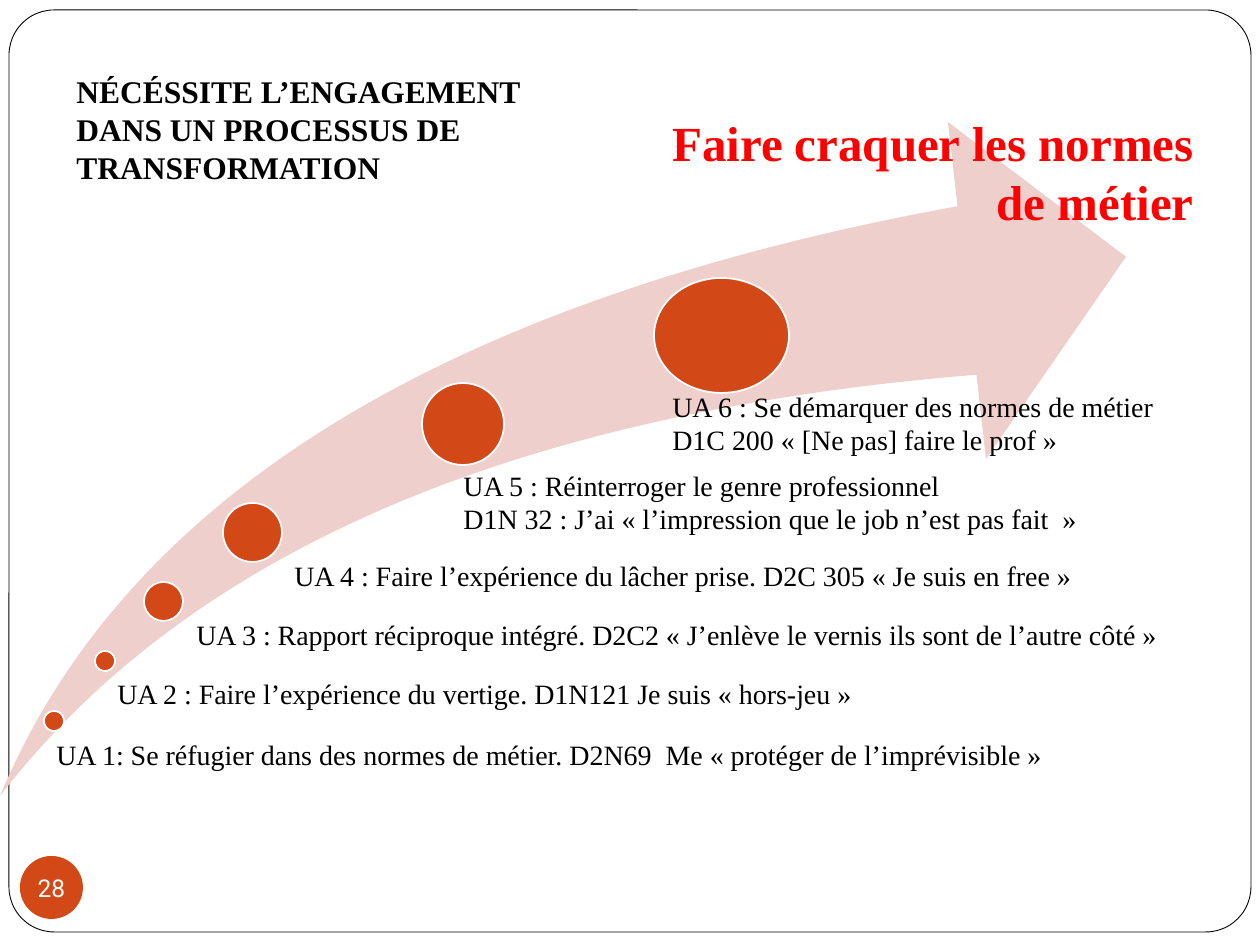
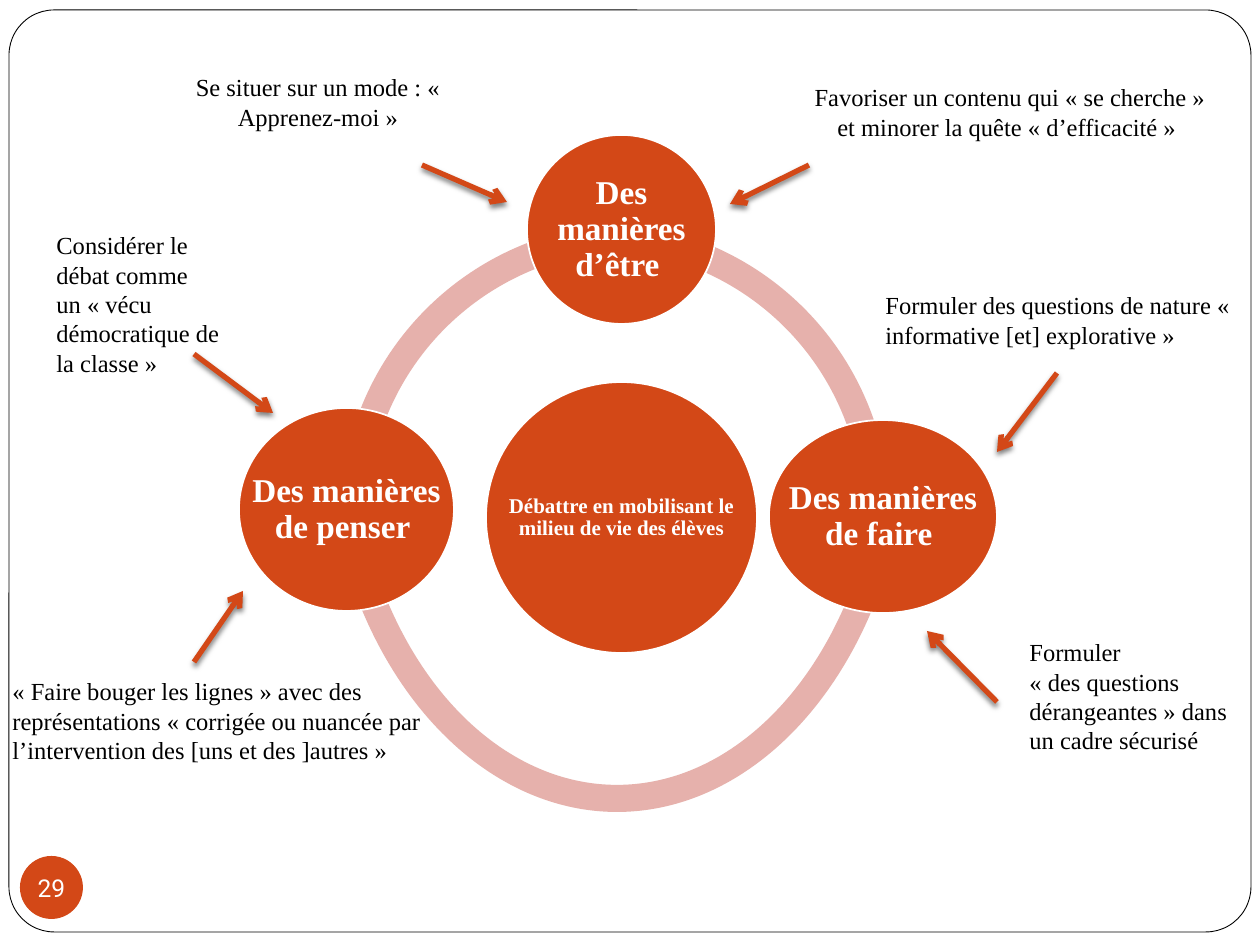
import pptx
import pptx.dml.color
import pptx.enum.shapes
import pptx.enum.text
import pptx.oxml
import pptx.oxml.ns
import pptx.util

RGBColor = pptx.dml.color.RGBColor
SHAPE = pptx.enum.shapes.MSO_SHAPE
ALIGN = pptx.enum.text.PP_ALIGN
ANCHOR = pptx.enum.text.MSO_ANCHOR

ORANGE = RGBColor(0xD3, 0x48, 0x17)
PALE_PINK = RGBColor(0xEF, 0xCF, 0xCC)
PINK = RGBColor(0xE6, 0xB1, 0xAC)
RED = RGBColor(0xFF, 0x00, 0x00)
WHITE = RGBColor(0xFF, 0xFF, 0xFF)
BLACK = RGBColor(0x00, 0x00, 0x00)

SERIF = "Times New Roman"
SANS = "Roboto"
PX_PER_INCH = 126

STEP_DOTS = [
    (654, 278, 135, 115),
    (422, 383, 82, 82),
    (223, 503, 59, 59),
    (144, 582, 39, 39),
    (95, 651, 20, 20),
    (44, 711, 20, 20),
]
STEP_TEXTS = [
    ((660, 383, 640, 118), "UA 6 : Se démarquer des normes de métier\nD1C 200 « [Ne pas] faire le prof »"),
    ((451, 462, 764, 118), "UA 5 : Réinterroger le genre professionnel\nD1N 32 : J’ai « l’impression que le job n’est pas fait  »"),
    ((282, 552, 922, 84), "UA 4 : Faire l’expérience du lâcher prise. D2C 305 « Je suis en free »"),
    ((184, 611, 1111, 84), "UA 3 : Rapport réciproque intégré. D2C2 « J’enlève le vernis ils sont de l’autre côté »"),
    ((105, 670, 973, 47), "UA 2 : Faire l’expérience du vertige. D1N121 Je suis « hors-jeu »"),
    ((44, 731, 1260, 84), "UA 1: Se réfugier dans des normes de métier. D2N69  Me « protéger de l’imprévisible »"),
]
RING_ARCS = [
    ((340, 223, 588, 588), 181.33, 267.43),
    ((323, 8, 588, 804), 21.69, 159.4),
    ((302, 222, 588, 588), 275.14, 359.87),
]
RING_CIRCLES = [
    ((486, 382, 271, 271), "Débattre en mobilisant le milieu de vie des élèves", 12, 3),
    ((527, 135, 189, 189), "Des manières d’être ", 19, 4),
    ((769, 420, 228, 193), "Des manières de faire ", 19, 4),
    ((239, 408, 215, 203), "Des manières de penser ", 19, 4),
]
NOTES = [
    ((154, 66, 328, 72), "Se situer sur un mode : « Apprenez-moi »", ALIGN.CENTER),
    ((799, 76, 422, 72), "Favoriser un contenu qui « se cherche » et minorer la quête « d’efficacité » ", ALIGN.CENTER),
    ((44, 224, 208, 161), "Considérer le débat comme\nun « vécu démocratique de la classe »", ALIGN.LEFT),
    ((0, 670, 496, 102), "« Faire bouger les lignes » avec des représentations « corrigée ou nuancée par l’intervention des [uns et des ]autres »", ALIGN.LEFT),
    ((873, 284, 387, 72), "Formuler des questions de nature « informative [et] explorative »", ALIGN.LEFT),
    ((1017, 631, 243, 131), "Formuler\n« des questions dérangeantes » dans un cadre sécurisé", ALIGN.LEFT),
]
NOTE_ARROWS = [
    (422, 165, 507, 202),
    (809, 165, 730, 204),
    (194, 354, 273, 413),
    (194, 662, 243, 591),
    (1057, 373, 997, 452),
    (997, 702, 927, 631),
]


def px(length):
    return pptx.util.Emu(round(length * 914400 / PX_PER_INCH))


def write(shape, text, size, color=BLACK, bold=False, align=ALIGN.LEFT, font=SERIF):
    shape.text_frame.text = text
    for paragraph in shape.text_frame.paragraphs:
        paragraph.alignment = align
        for run in paragraph.runs:
            run.font.name = font
            run.font.size = pptx.util.Pt(size)
            run.font.bold = bold
            run.font.color.rgb = color


def set_insets(frame, inset):
    frame.margin_left = frame.margin_right = px(inset)
    frame.margin_top = frame.margin_bottom = px(inset)


def add_text(slide, box, text, size, **style):
    shape = slide.shapes.add_textbox(*map(px, box))
    shape.text_frame.word_wrap = True
    write(shape, text, size, **style)
    return shape


def add_figure(slide, kind, box, fill, line=None, line_width=1, adjustments=()):
    shape = slide.shapes.add_shape(kind, *map(px, box))
    shape.shadow.inherit = False
    shape.fill.solid()
    shape.fill.fore_color.rgb = fill
    if line is None:
        shape.line.fill.background()
    else:
        shape.line.color.rgb = line
        shape.line.width = pptx.util.Pt(line_width)
    for index, value in enumerate(adjustments):
        shape.adjustments[index] = value
    return shape


def add_circle(slide, box):
    return add_figure(slide, SHAPE.OVAL, box, ORANGE, WHITE)


def add_labelled_circle(slide, box, text, size, inset):
    add_circle(slide, box)
    label = add_text(slide, box, text, size, color=WHITE, bold=True, align=ALIGN.CENTER)
    label.text_frame.vertical_anchor = ANCHOR.MIDDLE
    label.text_frame.paragraphs[0].line_spacing = 0.9
    set_insets(label.text_frame, inset)


def add_ring_arc(slide, box, start_degrees, end_degrees):
    angles = [degrees * 0.6 for degrees in (start_degrees, end_degrees)]
    add_figure(slide, SHAPE.BLOCK_ARC, box, PINK, adjustments=angles + [4.6 / 100])


def add_arrow(slide, ends):
    straight = pptx.enum.shapes.MSO_CONNECTOR.STRAIGHT
    connector = slide.shapes.add_connector(straight, *map(px, ends))
    connector.line.color.rgb = ORANGE
    connector.line.width = pptx.util.Pt(3)
    namespace = pptx.oxml.ns.nsdecls("a")
    head = pptx.oxml.parse_xml(f'<a:tailEnd {namespace} type="arrow"/>')
    connector.line._get_or_add_ln().append(head)
    shadow = pptx.oxml.parse_xml(
        f'<a:effectLst {namespace}>'
        '<a:outerShdw blurRad="38100" dist="25400" dir="5400000" rotWithShape="0">'
        '<a:srgbClr val="000000"><a:alpha val="50000"/></a:srgbClr>'
        '</a:outerShdw></a:effectLst>'
    )
    connector._element.spPr.append(shadow)


def add_framed_slide(presentation, number):
    slide = presentation.slides.add_slide(presentation.slide_layouts[6])
    add_figure(slide, SHAPE.ROUNDED_RECTANGLE, (9, 10, 1242, 922), WHITE, BLACK, 0.5, [4.9 / 100])
    badge = add_figure(slide, SHAPE.OVAL, (20, 856, 63, 63), ORANGE)
    write(badge, str(number), 14, color=WHITE, align=ALIGN.CENTER, font=SANS)
    badge.text_frame.word_wrap = False
    badge.text_frame.vertical_anchor = ANCHOR.MIDDLE
    set_insets(badge.text_frame, 0)
    return slide


def build_transformation_slide(presentation):
    slide = add_framed_slide(presentation, 28)
    add_figure(slide, SHAPE.SWOOSH_ARROW, (0, 122, 1126, 674), PALE_PINK, adjustments=[0.25, 0.25])
    for box in STEP_DOTS:
        add_circle(slide, box)
    add_text(slide, (630, 106, 576, 131), "Faire craquer les normes de métier", 28,
             color=RED, bold=True, align=ALIGN.RIGHT)
    for box, text in STEP_TEXTS:
        add_text(slide, box, text, 16)
    add_text(slide, (64, 66, 525, 127),
             "NÉCÉSSITE L’ENGAGEMENT DANS UN PROCESSUS DE TRANSFORMATION", 18, bold=True)


def build_debate_slide(presentation):
    slide = add_framed_slide(presentation, 29)
    for arc in RING_ARCS:
        add_ring_arc(slide, *arc)
    for circle in RING_CIRCLES:
        add_labelled_circle(slide, *circle)
    for box, text, align in NOTES:
        add_text(slide, box, text, 14, align=align)
    for ends in NOTE_ARROWS:
        add_arrow(slide, ends)


def main():
    presentation = pptx.Presentation()
    presentation.slide_width = px(1260)
    presentation.slide_height = px(945)
    build_transformation_slide(presentation)
    build_debate_slide(presentation)
    presentation.save("out.pptx")


if __name__ == "__main__":
    main()
